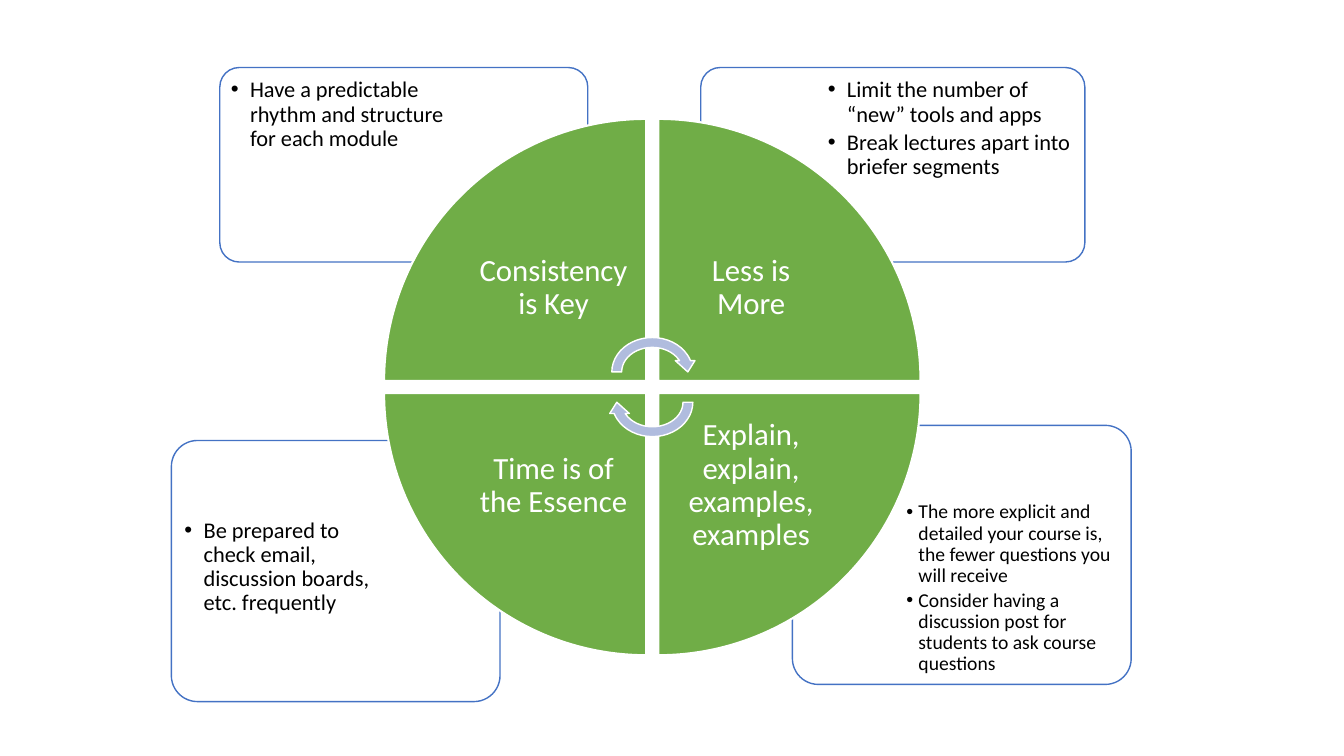
from lxml import etree
from pptx import Presentation
from pptx.dml.color import RGBColor
from pptx.enum.shapes import MSO_SHAPE as Shape
from pptx.enum.text import MSO_ANCHOR as Anchor, PP_ALIGN as Align
from pptx.oxml.ns import qn
from pptx.util import Inches, Pt

WHITE = RGBColor(0xFF, 0xFF, 0xFF)
BLACK = RGBColor(0, 0, 0)
GREEN = RGBColor(0x70, 0xAD, 0x47)
BLUE = RGBColor(0x44, 0x72, 0xC4)
LAVENDER = RGBColor(0xB0, 0xBC, 0xDE)

# Tips: frame, text area, font size, indent, inset, bullets
TIPS = [
    ((7.86, 4.22, 3.36, 2.57), (8.93, 4.92, 2.24, 1.82), 14, 0.12, 0.06,
     ["The more explicit and detailed your course is, the fewer questions you will receive",
      "Consider having a discussion post for students to ask course questions"]),
    ((1.7, 4.37, 3.26, 2.59), (1.76, 5.08, 2.17, 1.83), 16, 0.19, 0.07,
     ["Be prepared to check email, discussion boards, etc. frequently"]),
    ((6.95, 0.67, 3.81, 1.93), (8.14, 0.71, 2.58, 1.36), 16, 0.19, 0.07,
     ["Limit the number of “new” tools and apps",
      "Break lectures apart into briefer segments"]),
    ((2.18, 0.67, 3.65, 1.93), (2.22, 0.71, 2.47, 1.36), 16, 0.19, 0.07,
     ["Have a predictable rhythm and structure for each module"]),
]

# Quadrants clockwise from top left: label, column, row
QUADRANTS = [
    ("Consistency is Key", 0, 0),
    ("Less is More", 1, 0),
    ("Explain, explain, examples, examples", 1, 1),
    ("Time is of the Essence", 0, 1),
]
WHEEL_LEFT, WHEEL_TOP = 3.81, 1.18
WEDGE, GAP, LABEL = 2.6, 0.12, 1.84

# Arrows: top, rotation
ARROWS = [(3.3, 0), (3.6, 180)]

prs = Presentation()
prs.slide_width, prs.slide_height = Inches(13.33), Inches(7.5)
slide = prs.slides.add_slide(prs.slide_layouts[6])


def add_figure(kind, area, fill, line, width, rotation=0):
    figure = slide.shapes.add_shape(kind, *map(Inches, area))
    figure.shadow.inherit = False
    figure.fill.solid()
    figure.fill.fore_color.rgb = fill
    figure.line.color.rgb = line
    figure.line.width = Pt(width)
    figure.rotation = rotation
    return figure


def add_frame(area, inset, anchor):
    frame = slide.shapes.add_textbox(*map(Inches, area)).text_frame
    frame.word_wrap = True
    frame.vertical_anchor = anchor
    frame.margin_left = frame.margin_right = Inches(inset)
    frame.margin_top = frame.margin_bottom = Inches(inset)
    return frame


def set_font(paragraph, size, color):
    paragraph.line_spacing = 0.9
    paragraph.font.name = "Calibri"
    paragraph.font.size = Pt(size)
    paragraph.font.color.rgb = color


def add_bullet(paragraph, indent):
    props = paragraph._p.get_or_add_pPr()
    props.set("marL", str(Inches(indent)))
    props.set("indent", str(-Inches(indent)))
    etree.SubElement(props, qn("a:buFont")).set("typeface", "Arial")
    etree.SubElement(props, qn("a:buChar")).set("char", "•")


# Tip boxes
for box_area, text_area, size, indent, inset, bullets in TIPS:
    box = add_figure(Shape.ROUNDED_RECTANGLE, box_area, WHITE, BLUE, 1)
    box.adjustments[0] = 0.1
    fill_color = box.fill._xPr.find(qn("a:solidFill"))[0]
    etree.SubElement(fill_color, qn("a:alpha")).set("val", "90000")

    tips = add_frame(text_area, inset, Anchor.TOP)
    tips.text = "\n".join(bullets)
    for tip in tips.paragraphs:
        tip.level = 1
        add_bullet(tip, indent)
        tip.alignment = Align.LEFT
        tip.space_after = Pt(size * 0.18)
        set_font(tip, size, BLACK)

# Wheel: each label sits in the wedge corner nearest the centre
for turn, (name, col, row) in enumerate(QUADRANTS):
    left = WHEEL_LEFT + col * (WEDGE + GAP)
    top = WHEEL_TOP + row * (WEDGE + GAP)
    add_figure(Shape.PIE_WEDGE, (left, top, WEDGE, WEDGE), GREEN, WHITE, 1.5, 90 * turn)

    offset = WEDGE - LABEL
    label_area = (left + offset * (1 - col), top + offset * (1 - row), LABEL, LABEL)
    label = add_frame(label_area, 0.17, Anchor.MIDDLE)
    label.text = name
    label.paragraphs[0].alignment = Align.CENTER
    set_font(label.paragraphs[0], 22, WHITE)

# Rotation arrows
for top, rotation in ARROWS:
    add_figure(Shape.CIRCULAR_ARROW, (6.02, top, 0.9, 0.78), LAVENDER, WHITE, 1, rotation)

prs.save("out.pptx")
